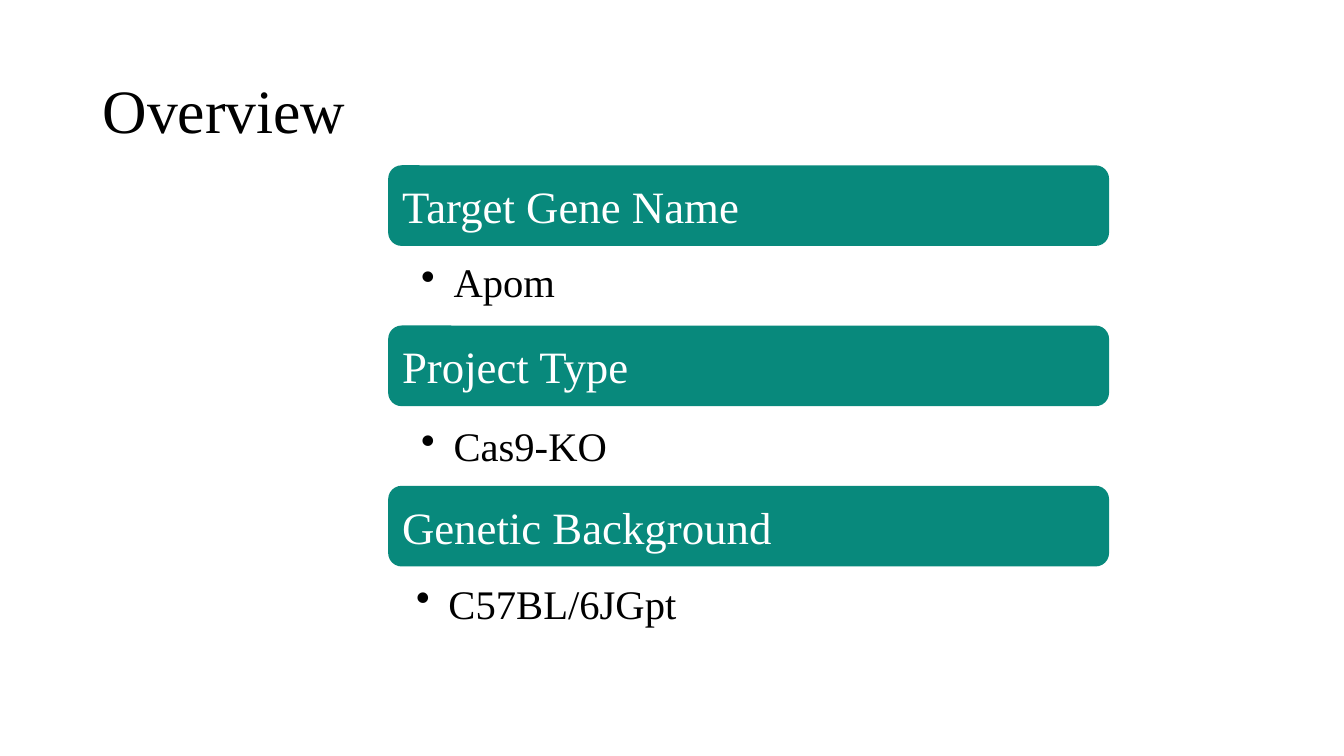
from lxml.etree import SubElement
from pptx import Presentation
from pptx.dml.color import RGBColor
from pptx.enum.shapes import MSO_SHAPE as SHAPE
from pptx.enum.text import MSO_ANCHOR as ANCHOR, MSO_AUTO_SIZE as AUTO_SIZE, PP_ALIGN as ALIGN
from pptx.oxml.ns import qn
from pptx.util import Inches

from pptx.util import Pt

BLACK = RGBColor(0x00, 0x00, 0x00)
WHITE = RGBColor(0xFF, 0xFF, 0xFF)
TEAL = RGBColor(0x08, 0x89, 0x7C)
FONT = "Times New Roman"

HEADING_LEFT = 3.85
HEADING_TOP = 1.64
HEADING_STEP = 1.59
SECTIONS = [
    ("Target Gene Name", "Apom", 3.9, 2.5),
    ("Project Type", "Cas9-KO", 3.9, 4.13),
    ("Genetic Background", "C57BL/6JGpt", 3.85, 5.69),
]


def write_text(tf, text, size, color=BLACK, anchor=ANCHOR.TOP, spacing=None, bullet=False):
    tf.word_wrap = True
    tf.vertical_anchor = anchor
    p = tf.paragraphs[0]
    p.alignment = ALIGN.LEFT
    if spacing:
        p.line_spacing = spacing
    if bullet:
        pPr = p._p.get_or_add_pPr()
        pPr.set("marL", str(Inches(0.5)))
        pPr.set("indent", str(Inches(-0.32)))
        SubElement(pPr, qn("a:buChar")).set("char", "•")
    r = p.add_run()
    r.text = text
    r.font.name = FONT
    r.font.size = Pt(size)
    r.font.color.rgb = color


class Deck:
    def __init__(self):
        self.prs = Presentation()
        self.prs.slide_width = Inches(13.33)
        self.prs.slide_height = Inches(7.5)
        self.s = self.prs.slides.add_slide(self.prs.slide_layouts[6])

    def title(self, text):
        box = self.s.shapes.add_textbox(Inches(0.92), Inches(0.4), Inches(11.5), Inches(1.45))
        write_text(box.text_frame, text, 44, anchor=ANCHOR.MIDDLE, spacing=0.9)

    def heading(self, text, top):
        sp = self.s.shapes.add_shape(
            SHAPE.ROUNDED_RECTANGLE, Inches(HEADING_LEFT), Inches(top), Inches(7.15), Inches(0.8)
        )
        sp.shadow.inherit = False
        sp.fill.solid()
        sp.fill.fore_color.rgb = TEAL
        sp.line.fill.background()
        write_text(sp.text_frame, text, 32, color=WHITE, anchor=ANCHOR.MIDDLE)

    def bullet(self, text, left, top):
        box = self.s.shapes.add_textbox(Inches(left), Inches(top), Inches(7.1), Inches(0.59))
        write_text(box.text_frame, text, 29, bullet=True)
        box.text_frame.auto_size = AUTO_SIZE.SHAPE_TO_FIT_TEXT


def main():
    deck = Deck()
    deck.title("Overview")
    for i, (heading, detail, left, top) in enumerate(SECTIONS):
        deck.heading(heading, HEADING_TOP + i * HEADING_STEP)
        deck.bullet(detail, left, top)
    deck.prs.save("out.pptx")


if __name__ == "__main__":
    main()
